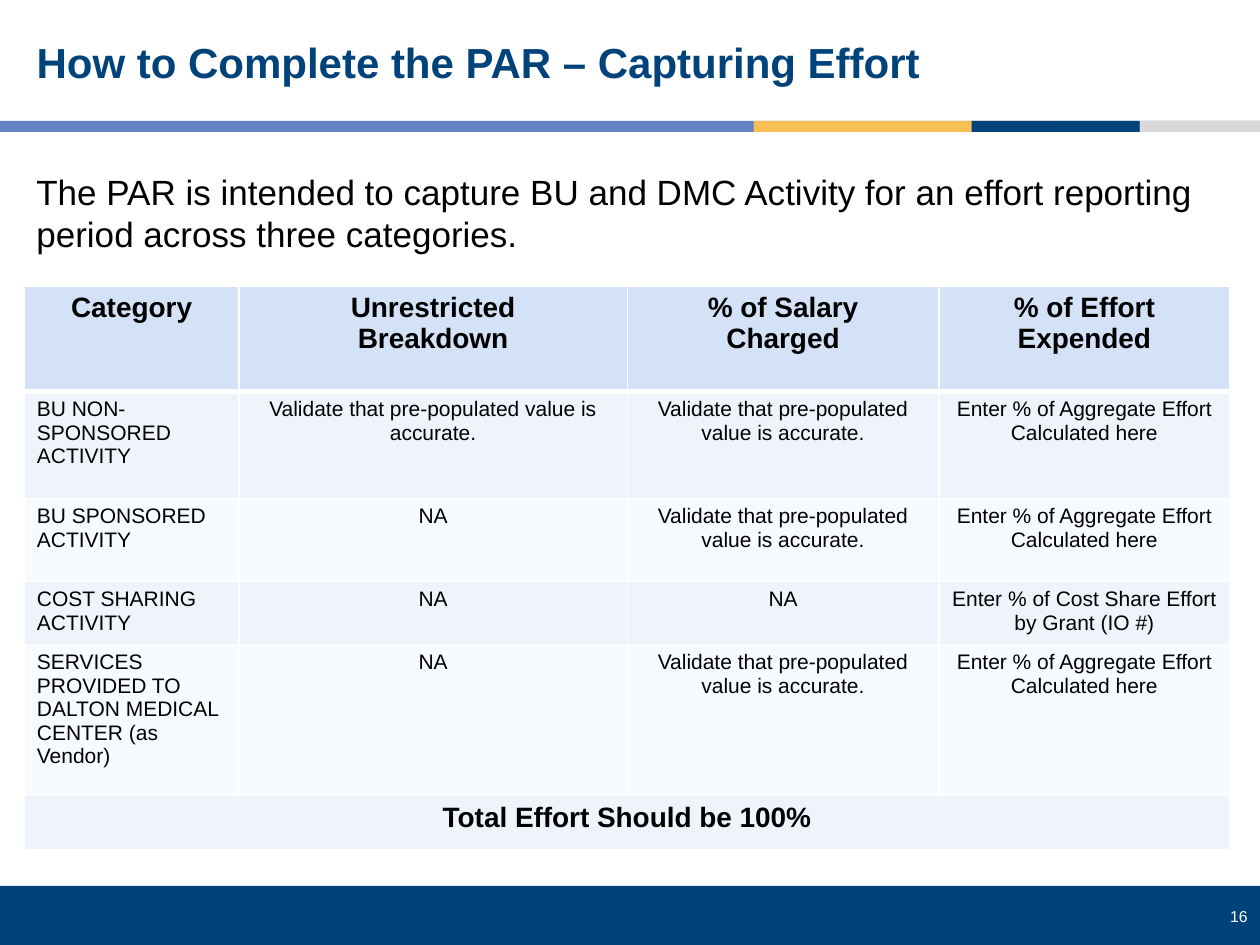
from dataclasses import dataclass

from lxml import etree
from pptx import Presentation
from pptx.dml.color import RGBColor
from pptx.enum.shapes import MSO_SHAPE
from pptx.enum.text import MSO_ANCHOR, PP_ALIGN
from pptx.oxml.ns import qn
from pptx.slide import Slide
from pptx.table import Table, _Cell
from pptx.text.text import TextFrame
from pptx.util import Pt

RECTANGLE = MSO_SHAPE.RECTANGLE
MIDDLE, TOP = MSO_ANCHOR.MIDDLE, MSO_ANCHOR.TOP
LEFT, CENTER, RIGHT = PP_ALIGN.LEFT, PP_ALIGN.CENTER, PP_ALIGN.RIGHT


@dataclass(frozen=True)
class Theme:
    font: str = "Arial"
    navy: str = "00437B"
    blue: str = "6283C2"
    gold: str = "F8BF56"
    grey: str = "D9D9D9"
    white: str = "FFFFFF"
    black: str = "000000"
    header_fill: str = "D4E2F8"
    band_fills: tuple[str, str] = ("EFF4FC", "F7FAFE")
    title_size: float = 24
    intro_size: float = 20
    heading_size: float = 16
    cell_size: float = 12
    number_size: float = 9


@dataclass(frozen=True)
class Box:
    left: float
    top: float
    width: float
    height: float

    def lengths(self) -> tuple[Pt, Pt, Pt, Pt]:
        return Pt(self.left), Pt(self.top), Pt(self.width), Pt(self.height)


@dataclass(frozen=True)
class Bar:
    box: Box
    color: str


@dataclass(frozen=True)
class Row:
    height: float
    cells: tuple[str, ...]


THEME = Theme()
STRIPE_TOP, STRIPE_HEIGHT = 69.1, 6.2
BARS = (
    Bar(Box(0, 506.2, 720, 33.8), THEME.navy),
    Bar(Box(0, STRIPE_TOP, 720, STRIPE_HEIGHT), THEME.blue),
    Bar(Box(430.6, STRIPE_TOP, 172.8, STRIPE_HEIGHT), THEME.gold),
    Bar(Box(555.2, STRIPE_TOP, 96, STRIPE_HEIGHT), THEME.navy),
    Bar(Box(651.4, STRIPE_TOP, 68.6, STRIPE_HEIGHT), THEME.grey),
)

TITLE_BOX = Box(13.7, 12.2, 689, 49.7)
INTRO_BOX = Box(13.7, 94, 692.6, 55.4)
NUMBER_BOX = Box(670.3, 514.8, 49.7, 18)

VALIDATE = "Validate that pre-populated value is accurate."
AGGREGATE = "Enter % of Aggregate Effort Calculated here"
COST_SHARE = "Enter % of Cost Share Effort by Grant (IO #)"
NOT_APPLICABLE = "NA"
COLUMN_WIDTHS = (122.6, 222, 178, 166.4)
HEADER_RULE_WIDTH = 3
ROWS = (
    Row(60, ("Category", "Unrestricted\nBreakdown", "% of Salary\nCharged", "% of Effort Expended")),
    Row(61.2, ("BU NON-SPONSORED ACTIVITY", VALIDATE, VALIDATE, AGGREGATE)),
    Row(47.4, ("BU SPONSORED ACTIVITY", NOT_APPLICABLE, VALIDATE, AGGREGATE)),
    Row(34.3, ("COST SHARING ACTIVITY", NOT_APPLICABLE, NOT_APPLICABLE, COST_SHARE)),
    Row(86.4, ("SERVICES PROVIDED TO DALTON MEDICAL CENTER (as Vendor)",
               NOT_APPLICABLE, VALIDATE, AGGREGATE)),
    Row(30.9, ("Total Effort Should be 100%",)),
)
TABLE_BOX = Box(13.9, 163.6, sum(COLUMN_WIDTHS), sum(row.height for row in ROWS))


def write_text(frame: TextFrame, text: str, *, size: float, color: str = THEME.black,
               bold: bool = False, align: PP_ALIGN = LEFT, anchor: MSO_ANCHOR = TOP,
               line_spacing: float = 1.0) -> None:
    frame.word_wrap = True
    frame.vertical_anchor = anchor
    for index, line in enumerate(text.split("\n")):
        paragraph = frame.paragraphs[0] if index == 0 else frame.add_paragraph()
        paragraph.alignment = align
        paragraph.line_spacing = line_spacing
        run = paragraph.add_run()
        run.text = line
        run.font.name = THEME.font
        run.font.size = Pt(size)
        run.font.bold = bold
        run.font.color.rgb = RGBColor.from_string(color)


def draw_bar(slide: Slide, bar: Bar) -> None:
    shape = slide.shapes.add_shape(RECTANGLE, *bar.box.lengths())
    shape.shadow.inherit = False
    shape.fill.solid()
    shape.fill.fore_color.rgb = RGBColor.from_string(bar.color)
    shape.line.fill.background()


def draw_title(slide: Slide, text: str) -> None:
    title = slide.shapes.title
    title.left, title.top, title.width, title.height = TITLE_BOX.lengths()
    write_text(title.text_frame, text, size=THEME.title_size, color=THEME.navy,
               bold=True, anchor=MIDDLE, line_spacing=0.9)


def set_bottom_border(cell: _Cell, width: float, color: str) -> None:
    border = etree.Element(qn("a:lnB"), w=str(Pt(width)))
    fill = etree.SubElement(border, qn("a:solidFill"))
    etree.SubElement(fill, qn("a:srgbClr"), val=color)
    cell._tc.get_or_add_tcPr().insert(0, border)


def fill_row(table: Table, row_index: int, row: Row) -> None:
    is_header = row_index == 0
    is_total = len(row.cells) == 1
    is_heading = is_header or is_total
    fill = THEME.header_fill if is_header else THEME.band_fills[(row_index - 1) % 2]
    table.rows[row_index].height = Pt(row.height)
    for column_index in range(len(COLUMN_WIDTHS)):
        cell = table.cell(row_index, column_index)
        cell.fill.solid()
        cell.fill.fore_color.rgb = RGBColor.from_string(fill)
        if is_header:
            set_bottom_border(cell, HEADER_RULE_WIDTH, THEME.white)
    if is_total:
        table.cell(row_index, 0).merge(table.cell(row_index, len(COLUMN_WIDTHS) - 1))
    for column_index, text in enumerate(row.cells):
        cell = table.cell(row_index, column_index)
        cell.vertical_anchor = TOP
        write_text(cell.text_frame, text, bold=is_heading,
                   size=THEME.heading_size if is_heading else THEME.cell_size,
                   align=CENTER if is_heading or column_index else LEFT)


def draw_table(slide: Slide) -> None:
    table = slide.shapes.add_table(len(ROWS), len(COLUMN_WIDTHS), *TABLE_BOX.lengths()).table
    for column, width in zip(table.columns, COLUMN_WIDTHS):
        column.width = Pt(width)
    for row_index, row in enumerate(ROWS):
        fill_row(table, row_index, row)


def main() -> None:
    presentation = Presentation()
    presentation.slide_width, presentation.slide_height = Pt(720), Pt(540)
    slide = presentation.slides.add_slide(presentation.slide_layouts[5])
    for bar in BARS:
        draw_bar(slide, bar)
    number = slide.shapes.add_textbox(*NUMBER_BOX.lengths())
    write_text(number.text_frame, "16", size=THEME.number_size, color=THEME.white, align=RIGHT)
    draw_title(slide, "How to Complete the PAR – Capturing Effort")
    draw_table(slide)
    intro = slide.shapes.add_textbox(*INTRO_BOX.lengths())
    write_text(intro.text_frame, "The PAR is intended to capture BU and DMC Activity for an effort "
               "reporting period across three categories.", size=THEME.intro_size)
    presentation.save("out.pptx")


if __name__ == "__main__":
    main()
